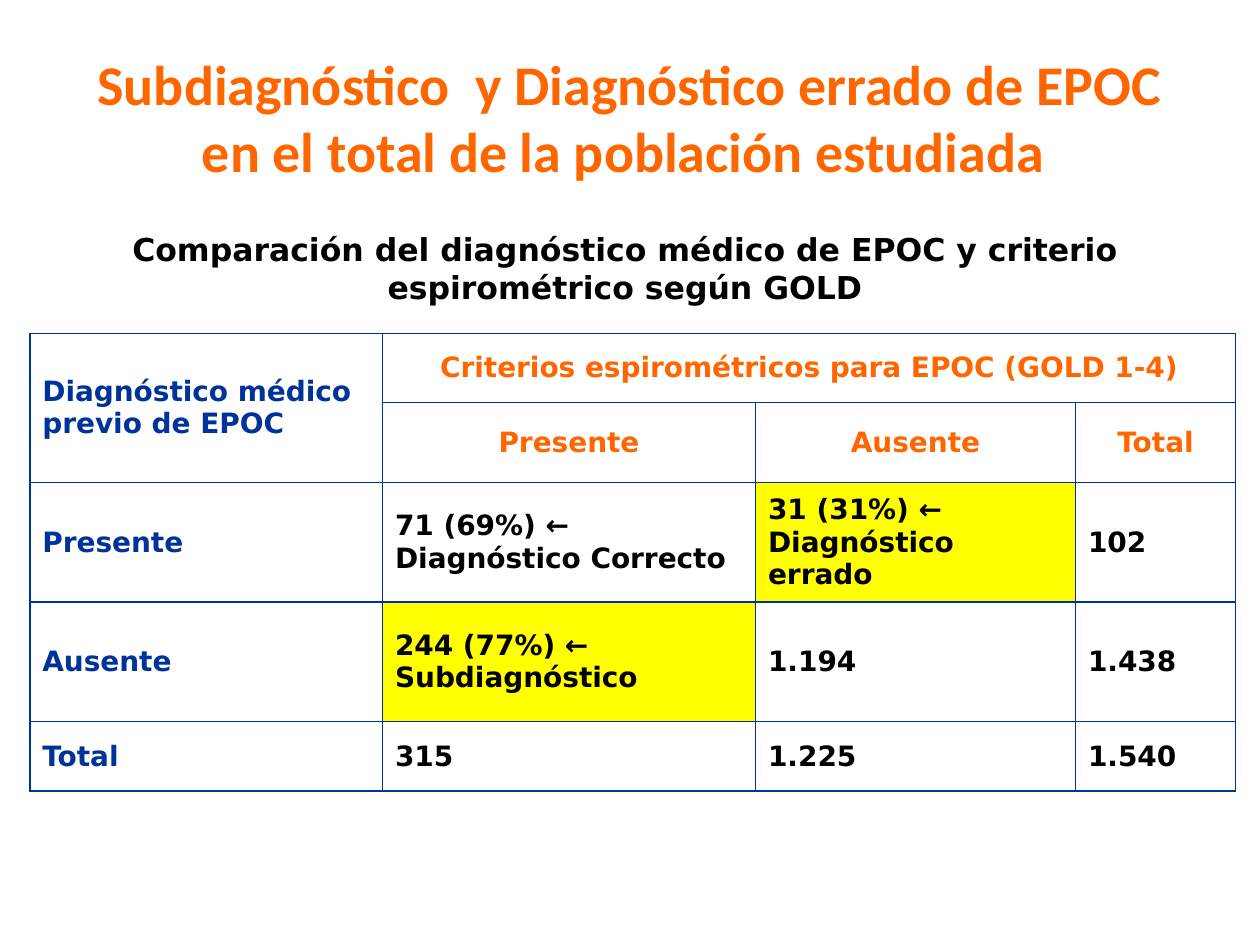
from dataclasses import dataclass

from lxml import etree
from pptx import Presentation
from pptx.dml.color import RGBColor
from pptx.enum.text import MSO_ANCHOR, PP_ALIGN
from pptx.oxml.ns import qn
from pptx.util import Cm, Pt

LEFT, CENTER = PP_ALIGN.LEFT, PP_ALIGN.CENTER
TOP, MIDDLE = MSO_ANCHOR.TOP, MSO_ANCHOR.MIDDLE


@dataclass(frozen=True)
class Theme:
    heading: str = "FF6600"
    label: str = "003399"
    body: str = "000000"
    highlight: str = "FFFF00"
    border: str = "003399"
    title_font: str = "Calibri"
    body_font: str = "DejaVu Sans"
    title_size: int = 32
    subtitle_size: int = 18
    table_size: int = 16
    border_width: int = 1


THEME = Theme()

TITLE = "Subdiagnóstico  y Diagnóstico errado de EPOC en el total de la población estudiada "
SUBTITLE = "Comparación del diagnóstico médico de EPOC y criterio espirométrico según GOLD"
TABLE_ROWS = [
    ["Diagnóstico médico previo de EPOC", "Criterios espirométricos para EPOC (GOLD 1-4)", "", ""],
    ["", "Presente", "Ausente", "Total"],
    ["Presente", "71 (69%) ← Diagnóstico Correcto", "31 (31%) ← Diagnóstico errado", "102"],
    ["Ausente", "244 (77%) ← Subdiagnóstico", "1.194", "1.438"],
    ["Total", "315", "1.225", "1.540"],
]
HEADER_ROWS = 2
HIGHLIGHTED_CELLS = {(2, 2), (3, 1)}
COLUMN_WIDTHS = [7.11, 7.52, 6.45, 3.23]
ROW_HEIGHTS = [1.4, 1.55, 2.41, 2.41, 1.4]


def write_text(text_frame, text, font_name, size, color, alignment):
    text_frame.text = text
    paragraph = text_frame.paragraphs[0]
    paragraph.alignment = alignment
    for run in paragraph.runs:
        run.font.name = font_name
        run.font.size = Pt(size)
        run.font.bold = True
        run.font.color.rgb = RGBColor.from_string(color)


def add_centered_text(slide, text, left, top, width, height, font_name, size, color, anchor):
    text_box = slide.shapes.add_textbox(Cm(left), Cm(top), Cm(width), Cm(height))
    text_frame = text_box.text_frame
    text_frame.word_wrap = True
    text_frame.vertical_anchor = anchor
    write_text(text_frame, text, font_name, size, color, CENTER)


def set_borders(cell):
    """Draw all four cell sides; must run before the fill is set."""
    properties = cell._tc.get_or_add_tcPr()
    for side in ("lnL", "lnR", "lnT", "lnB"):
        line = etree.SubElement(properties, qn(f"a:{side}"), w=str(Pt(THEME.border_width)))
        fill = etree.SubElement(line, qn("a:solidFill"))
        etree.SubElement(fill, qn("a:srgbClr"), val=THEME.border)


def format_cell(cell, text, row, column):
    set_borders(cell)
    if (row, column) in HIGHLIGHTED_CELLS:
        cell.fill.solid()
        cell.fill.fore_color.rgb = RGBColor.from_string(THEME.highlight)
    else:
        cell.fill.background()
    cell.vertical_anchor = MIDDLE
    if column == 0:
        color, alignment = THEME.label, LEFT
    elif row < HEADER_ROWS:
        color, alignment = THEME.heading, CENTER
    else:
        color, alignment = THEME.body, LEFT
    write_text(cell.text_frame, text, THEME.body_font, THEME.table_size, color, alignment)


def add_diagnosis_table(slide, left, top):
    table = slide.shapes.add_table(
        len(ROW_HEIGHTS), len(COLUMN_WIDTHS), Cm(left), Cm(top),
        Cm(sum(COLUMN_WIDTHS)), Cm(sum(ROW_HEIGHTS)),
    ).table
    table.first_row = False
    table.horz_banding = False
    for column, width in zip(table.columns, COLUMN_WIDTHS):
        column.width = Cm(width)
    for row, height in zip(table.rows, ROW_HEIGHTS):
        row.height = Cm(height)
    for row, texts in enumerate(TABLE_ROWS):
        for column, text in enumerate(texts):
            format_cell(table.cell(row, column), text, row, column)
    table.cell(0, 0).merge(table.cell(1, 0))
    table.cell(0, 1).merge(table.cell(0, 3))


def main():
    presentation = Presentation()
    presentation.slide_width = Cm(25.4)
    presentation.slide_height = Cm(19.05)
    slide = presentation.slides.add_slide(presentation.slide_layouts[6])
    add_centered_text(slide, TITLE, 1.27, 0.76, 22.86, 3.18,
                      THEME.title_font, THEME.title_size, THEME.heading, MIDDLE)
    add_diagnosis_table(slide, 0.6, 6.72)
    add_centered_text(slide, SUBTITLE, 1.5, 4.52, 22.2, 1.8,
                      THEME.body_font, THEME.subtitle_size, THEME.body, TOP)
    presentation.save("out.pptx")


if __name__ == "__main__":
    main()
